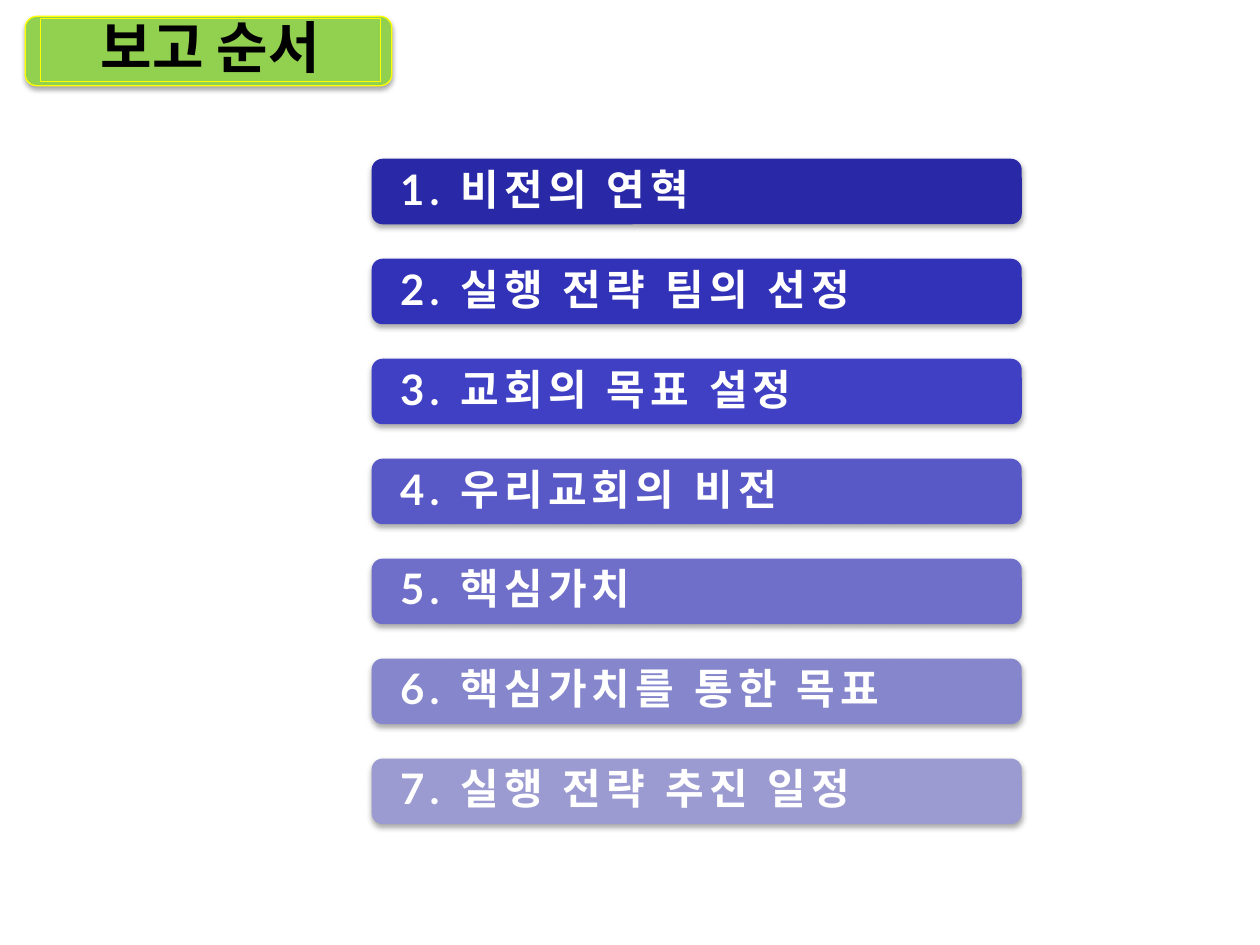
import dataclasses

import lxml.etree
import pptx
import pptx.dml.color
import pptx.enum.shapes
import pptx.enum.text
import pptx.oxml.ns
import pptx.util

Inches = pptx.util.Inches
Pt = pptx.util.Pt
SHAPES = pptx.enum.shapes.MSO_SHAPE
ALIGN = pptx.enum.text.PP_ALIGN


@dataclasses.dataclass(frozen=True)
class Theme:
    """Colours, font and type sizes of the slide."""
    font: str = "Lato"
    title_size: int = 32
    item_size: int = 24
    title_ink: str = "000000"
    item_ink: str = "FFFFFF"
    title_fill: str = "92D050"
    title_line: str = "FFFF00"
    shadow: str = "000000"


THEME = Theme()
AGENDA = [
    ("1. 비전의 연혁", "2929A8"),
    ("2. 실행 전략 팀의 선정", "3232B8"),
    ("3. 교회의 목표 설정", "4040C4"),
    ("4. 우리교회의 비전", "5858C6"),
    ("5. 핵심가치", "6F6FC9"),
    ("6. 핵심가치를 통한 목표", "8686CD"),
    ("7. 실행 전략 추진 일정", "9B9BD1"),
]
FIRST_TOP, LAST_TOP = 1.26, 6.02


def rgb(value):
    """Turn a hex string into a colour."""
    return pptx.dml.color.RGBColor.from_string(value)


def apply(target, formats):
    """Set each named format value on the target."""
    for name, value in formats.items():
        setattr(target, name, value)


def add_child(parent, tag, **attributes):
    """Append a drawing element and return it."""
    return lxml.etree.SubElement(parent, pptx.oxml.ns.qn(tag), attributes)


def add_panel(slide, kind, box, fill, line=None):
    """Add a filled panel with an optional outline and no shadow."""
    panel = slide.shapes.add_shape(kind, *map(Inches, box))
    panel.shadow.inherit = False
    panel.fill.solid()
    panel.fill.fore_color.rgb = rgb(fill)
    if line:
        panel.line.color.rgb = rgb(line)
        panel.line.width = Pt(0.75)
    else:
        panel.line.fill.background()
    return panel


def drop_shadow(panel):
    """Give a panel a soft shadow straight below it."""
    effects = panel.element.spPr.find(pptx.oxml.ns.qn("a:effectLst"))
    shadow = add_child(effects, "a:outerShdw", blurRad=str(Pt(3.1)), dist=str(Pt(1.8)),
                       dir="5400000", algn="t", rotWithShape="0")
    color = add_child(shadow, "a:srgbClr", val=THEME.shadow)
    add_child(color, "a:alpha", val="35000")


def write_label(panel, text, size, ink, align, inset, tracking=0):
    """Write one bold line in a panel."""
    frame = panel.text_frame
    apply(frame, {
        "word_wrap": True,
        "vertical_anchor": pptx.enum.text.MSO_ANCHOR.MIDDLE,
        "margin_left": Inches(inset),
        "margin_right": Inches(inset),
        "margin_top": 0,
        "margin_bottom": 0,
    })
    paragraph = frame.paragraphs[0]
    apply(paragraph, {"alignment": align, "line_spacing": 0.9})
    after = add_child(paragraph.line_spacing and paragraph._p.get_or_add_pPr(), "a:spcAft")
    add_child(after, "a:spcPct", val="35000")
    run = paragraph.add_run()
    run.text = text
    apply(run.font, {"name": THEME.font, "size": Pt(size), "bold": True})
    run.font.color.rgb = rgb(ink)
    if tracking:
        run.font._element.set("spc", str(tracking * 100))


def add_agenda(slide):
    """Add the evenly spaced agenda bars."""
    pitch = (LAST_TOP - FIRST_TOP) / (len(AGENDA) - 1)
    for index, (topic, fill) in enumerate(AGENDA):
        box = (2.95, FIRST_TOP + index * pitch, 5.16, 0.52)
        bar = add_panel(slide, SHAPES.ROUNDED_RECTANGLE, box, fill)
        drop_shadow(bar)
        write_label(bar, topic, THEME.item_size, THEME.item_ink, ALIGN.LEFT, 0.2, tracking=3)


def add_title(slide):
    """Add the framed title plate."""
    colors = (THEME.title_fill, THEME.title_line)
    plate = add_panel(slide, SHAPES.ROUNDED_RECTANGLE, (0.2, 0.13, 2.91, 0.55), *colors)
    drop_shadow(plate)
    heading = add_panel(slide, SHAPES.RECTANGLE, (0.32, 0.15, 2.7, 0.5), *colors)
    write_label(heading, "보고 순서", THEME.title_size, THEME.title_ink, ALIGN.CENTER, 0.21)


def main():
    """Build and save the agenda slide."""
    deck = pptx.Presentation()
    apply(deck, {"slide_width": Inches(10), "slide_height": Inches(7.5)})
    slide = deck.slides.add_slide(deck.slide_layouts[6])
    add_agenda(slide)
    add_title(slide)
    deck.save("out.pptx")


if __name__ == "__main__":
    main()
